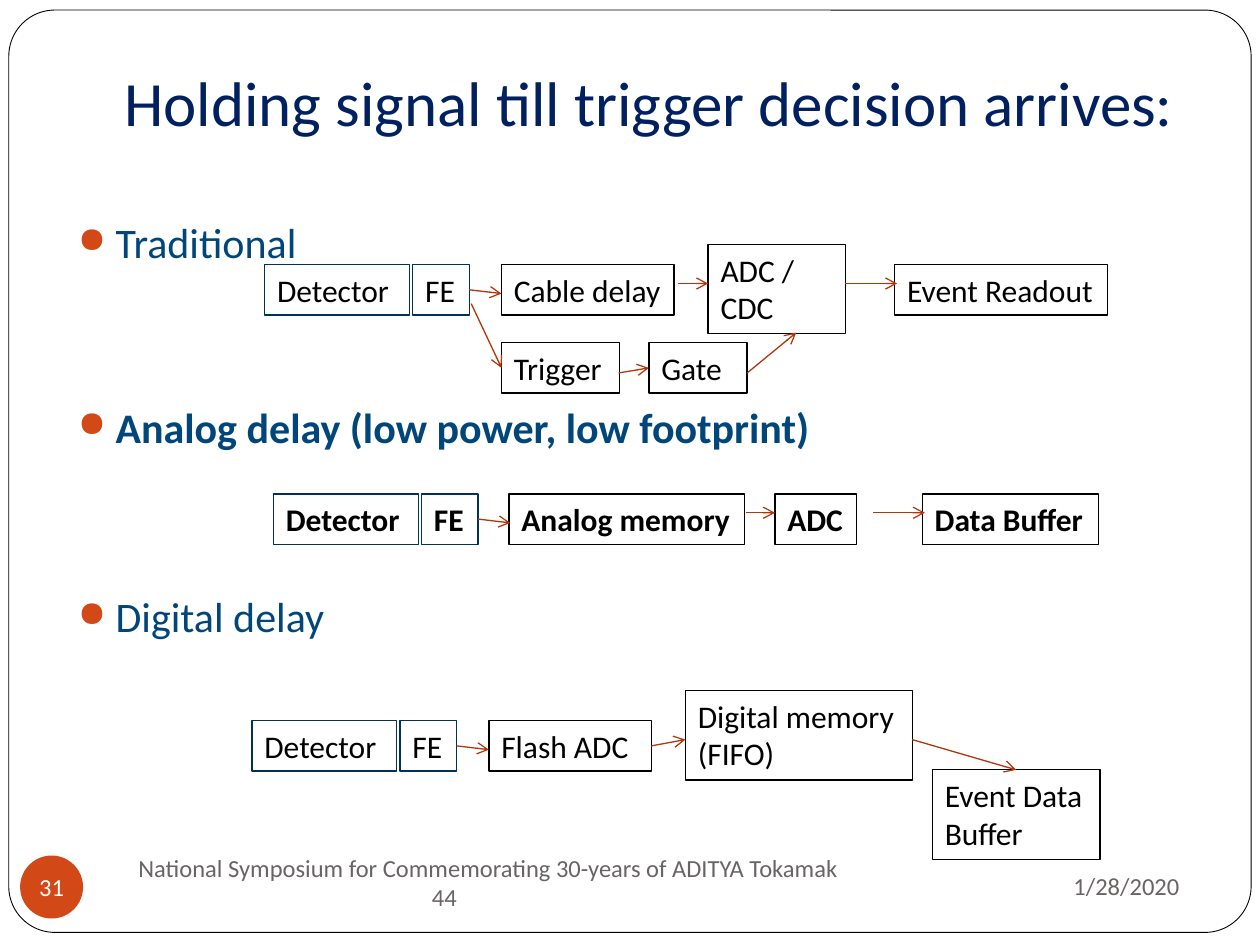
from typing import NamedTuple, Optional, Union

from lxml.etree import SubElement
from pptx import Presentation
from pptx.dml.color import RGBColor
from pptx.enum.shapes import MSO_CONNECTOR, MSO_SHAPE
from pptx.enum.text import MSO_ANCHOR, PP_ALIGN
from pptx.oxml.ns import qn
from pptx.util import Inches, Pt

BLACK = RGBColor(0x00, 0x00, 0x00)
WHITE = RGBColor(0xFF, 0xFF, 0xFF)
NAVY = RGBColor(0x00, 0x20, 0x60)
BLUE = RGBColor(0x00, 0x46, 0x7A)
DEEP = RGBColor(0x00, 0x32, 0x58)
ORANGE = RGBColor(0xD3, 0x48, 0x17)
RUST = RGBColor(0xB1, 0x36, 0x0B)
GREY = RGBColor(0x69, 0x64, 0x64)

FONT = "Calibri"
CELL = 0.1  # the slide is a grid of 100 columns by 75 rows
TALL = {1: 4.0, 2: 7.1}  # rows taken by a box with one or two lines
TOP, LEFT, BOTTOM, RIGHT = range(4)


class Box(NamedTuple):
    text: str
    col: float
    row: float
    wide: float
    lines: int = 1
    edge: RGBColor = BLACK


class Glue(NamedTuple):
    name: str
    side: int


class Spot(NamedTuple):
    col: float
    row: float


class Link(NamedTuple):
    start: Union[Glue, Spot]
    end: Union[Glue, Spot]


class Flow(NamedTuple):
    col: float
    row: float
    boxes: list[Box]
    links: list[Link]
    bold: bool = False
    fill: Optional[RGBColor] = None


class Item(NamedTuple):
    text: str
    gap: float
    bold: bool = False


FLOWS = [
    # Analog delay
    Flow(21.7, 39.2,
         [Box("Analog memory", 40.4, 39.2, 18.7),
          Box("ADC", 61.5, 39.2, 6.5),
          Box("Data Buffer", 73.2, 39.2, 14)],
         [Link(Spot(59.2, 40.7), Spot(61.5, 40.7)),
          Link(Spot(69.3, 40.7), Spot(73.4, 40.7))],
         bold=True, fill=WHITE),
    # Digital delay
    Flow(20, 57.2,
         [Box("Flash ADC", 38.8, 57.2, 12.9),
          Box("Digital memory\n(FIFO)", 54.4, 54.8, 18, 2),
          Box("Event Data Buffer", 74, 61.1, 13.3, 2)],
         [Link(Glue("Flash ADC", RIGHT), Spot(54.4, 58.7)),
          Link(Spot(72.4, 58.7), Glue("Event Data Buffer", TOP))]),
    # Traditional
    Flow(21, 21,
         [Box("Cable delay", 39.8, 21, 13.7),
          Box("ADC / CDC", 56.2, 19.4, 10.9, 2),
          Box("Event Readout", 71, 21, 16.9),
          Box("Trigger", 39.8, 27.2, 9.4),
          Box("Gate", 51.5, 27.2, 7.8)],
         [Link(Spot(53.8, 22.5), Spot(56.2, 22.5)),
          Link(Spot(67.1, 22.5), Spot(71.2, 22.5)),
          Link(Spot(37.4, 24.1), Glue("Trigger", LEFT)),
          Link(Spot(49.1, 29.6), Glue("Gate", LEFT)),
          Link(Spot(59.3, 29.6), Spot(63.2, 26.4))]),
]

ITEMS = [Item("Traditional", 0),
         Item("Analog delay (low power, low footprint)", 76.7, True),
         Item("Digital delay", 79.3)]


def grid(*cells: float) -> list[int]:
    return [Inches(cell * CELL) for cell in cells]


def write(shape, text: str, size: float = 18, color: RGBColor = BLACK,
          bold: bool = False, align=PP_ALIGN.LEFT, anchor=MSO_ANCHOR.TOP,
          pad: tuple = (1, 0.5, 1, 0.5)) -> list:
    """Fill the shape with one paragraph per line and return them."""
    frame = shape.text_frame
    frame.word_wrap = True
    frame.vertical_anchor = anchor
    (frame.margin_left, frame.margin_top,
     frame.margin_right, frame.margin_bottom) = grid(*pad)
    frame.text = text
    for para in frame.paragraphs:
        para.alignment = align
        font = para.runs[0].font
        font.name, font.size, font.bold = FONT, Pt(size), bold
        font.color.rgb = color
    return list(frame.paragraphs)


def plate(slide, kind, place: tuple, fill: Optional[RGBColor],
          edge: Optional[RGBColor], width: float = 0.75):
    shape = slide.shapes.add_shape(kind, *grid(*place))
    shape.shadow.inherit = False
    if fill is None:
        shape.fill.background()
    else:
        shape.fill.solid()
        shape.fill.fore_color.rgb = fill
    if edge is None:
        shape.line.fill.background()
    else:
        shape.line.color.rgb = edge
        shape.line.width = Pt(width)
    return shape


def label(slide, place: tuple, text: str, **form) -> list:
    return write(slide.shapes.add_textbox(*grid(*place)), text, **form)


def arrow(slide, link: Link, shapes: dict) -> None:
    ends = [grid(*end) if isinstance(end, Spot) else [0, 0] for end in link]
    line = slide.shapes.add_connector(MSO_CONNECTOR.STRAIGHT, *ends[0], *ends[1])
    for end, join in zip(link, (line.begin_connect, line.end_connect)):
        if isinstance(end, Glue):
            join(shapes[end.name], end.side)
    line.line.color.rgb = RUST
    line.line.width = Pt(0.75)
    SubElement(line.line._get_or_add_ln(), qn("a:tailEnd"), type="arrow")
    SubElement(line._element.spPr, qn("a:effectLst"))


def draw(slide, flow: Flow) -> None:
    """Every flow starts with a detector and its front end."""
    head = [Box("Detector", flow.col, flow.row, 11.5, edge=DEEP),
            Box("FE", flow.col + 11.75, flow.row, 4.5, edge=DEEP)]
    shapes = {}
    for box in head + flow.boxes:
        place = (box.col, box.row, box.wide, TALL[box.lines])
        shape = plate(slide, MSO_SHAPE.RECTANGLE, place, flow.fill, box.edge)
        write(shape, box.text, bold=flow.bold, pad=(1, 0.5, 0, 0.5))
        shapes[box.text] = shape
    first = Link(Glue("FE", RIGHT), Spot(flow.col + 18.8, flow.row + 2.3))
    for link in [first] + flow.links:
        arrow(slide, link, shapes)


def bullet(para, item: Item) -> None:
    para.space_before = Pt(item.gap)
    para.runs[0].font.bold = item.bold
    props = para._p.get_or_add_pPr()
    props.set("marL", str(Inches(0.3)))
    props.set("indent", str(-Inches(0.3)))
    tint = SubElement(props, qn("a:buClr"))
    SubElement(tint, qn("a:srgbClr"), val=str(ORANGE))
    SubElement(props, qn("a:buSzPct"), val="85000")
    SubElement(props, qn("a:buChar"), char="●")


def main() -> None:
    deck = Presentation()
    deck.slide_width, deck.slide_height = grid(100, 75)
    slide = deck.slides.add_slide(deck.slide_layouts[6])

    # Frame and title
    frame = plate(slide, MSO_SHAPE.ROUNDED_RECTANGLE, (0.7, 0.8, 98.6, 73.2),
                  WHITE, BLACK, 0.5)
    frame.adjustments[0] = 0.05
    label(slide, (8.9, 4.2, 88.3, 7.8),
          "Holding signal till trigger decision arrives:", size=36, color=NAVY,
          anchor=MSO_ANCHOR.BOTTOM, pad=(1, 0.5, 1, 1))

    # Bullets and their flows
    paras = label(slide, (5.2, 16.7, 90, 49.5),
                  "\n".join(item.text for item in ITEMS), size=24, color=BLUE)
    for para, item in zip(paras, ITEMS):
        bullet(para, item)
    for flow in FLOWS:
        draw(slide, flow)

    # Footer, date and page number
    small = {"size": 14, "anchor": MSO_ANCHOR.MIDDLE}
    foot = label(slide, (10, 67.5, 61, 5),
                 "National Symposium for Commemorating 30-years of ADITYA Tokamak\n44",
                 color=GREY, **small)
    foot[1]._p.get_or_add_pPr().set("marL", str(Inches(2.33)))
    label(slide, (67.5, 67.7, 27.1, 5.2), "1/28/2020", color=GREY,
          align=PP_ALIGN.RIGHT, **small)
    disc = plate(slide, MSO_SHAPE.OVAL, (1.6, 67.9, 5, 5), ORANGE, None)
    write(disc, "31", color=WHITE, align=PP_ALIGN.CENTER, pad=(0, 0, 0, 0), **small)

    deck.save("out.pptx")


if __name__ == "__main__":
    main()
